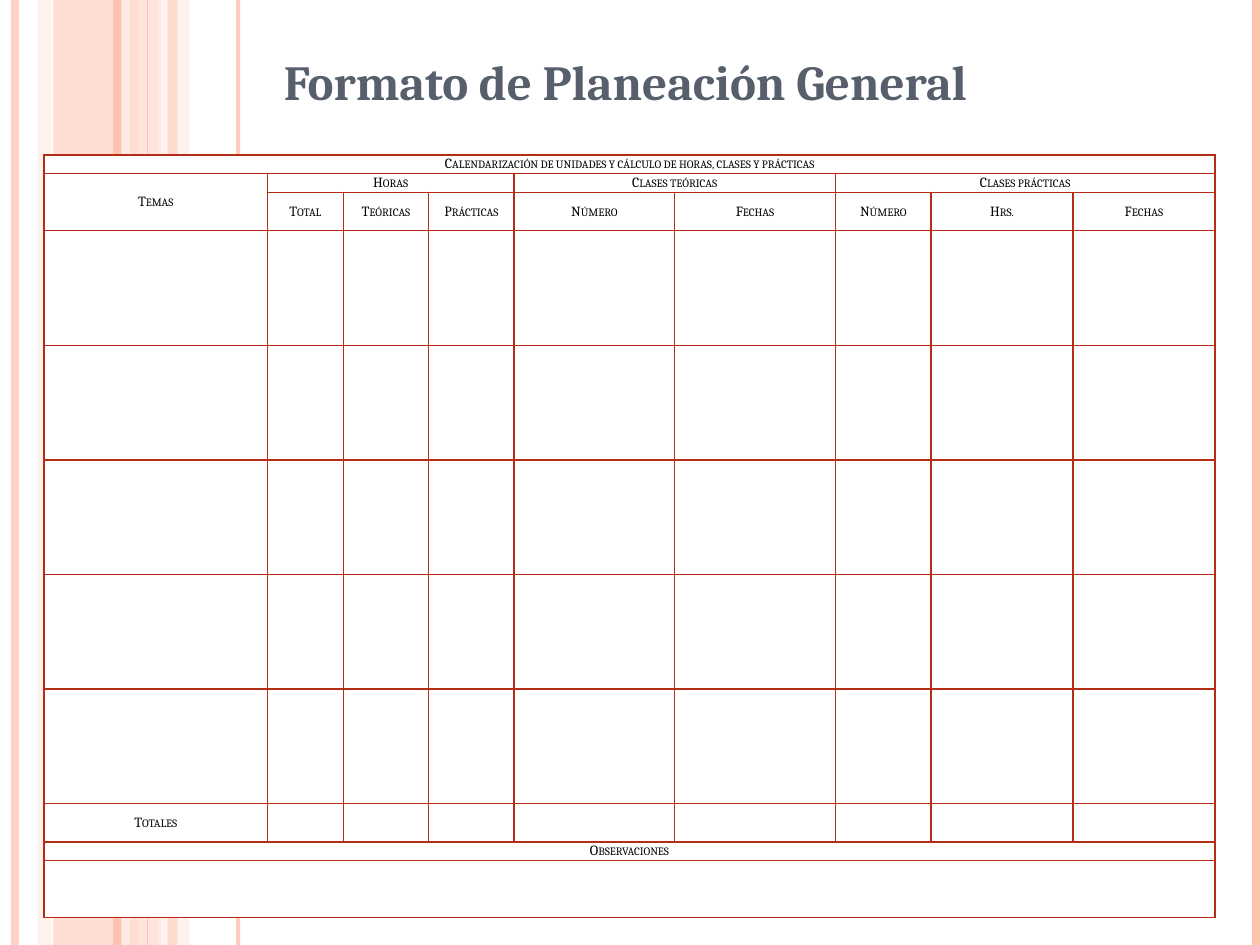
from lxml.etree import SubElement as Sub
from pptx import Presentation
from pptx.dml.color import RGBColor
from pptx.enum.shapes import MSO_CONNECTOR as Link, MSO_SHAPE as Kind
from pptx.enum.text import MSO_ANCHOR as Anchor, PP_ALIGN as Align
from pptx.oxml.ns import qn
from pptx.util import Cm, Pt

PEACH = RGBColor(0xFE, 0xC3, 0xAE)
PALE = RGBColor(0xFF, 0xD9, 0xCE)
MIST = RGBColor(0xFF, 0xED, 0xE8)
SLATE = RGBColor(0x57, 0x5F, 0x6D)
RUST = RGBColor(0xB3, 0x2C, 0x16)
BLACK = RGBColor(0, 0, 0)
WHITE = RGBColor(0xFF, 0xFF, 0xFF)
FONT = "Cambria"
WIDE, HIGH = 25.4, 19.05

BANDS = [
    (1.07, 1.7, PEACH, 54),
    (0.76, 0.28, PALE, 36),
    (2.74, 0.51, PALE, 70),
    (3.18, 0.64, MIST, 71),
    (3.38, 0.2, PEACH, 51),
]
STRIPES = [
    (0.3, 4.5, PEACH, 73),
    (2.54, 4.5, MIST, 83),
    (2.36, 4.5, PEACH, 100),
    (4.8, 2.25, PEACH, 82),
    (2.97, 0.75, PEACH, 100),
    (25.32, 4.5, PEACH, 100),
]
COLS = [4.5, 1.53, 1.72, 1.72, 3.24, 3.24, 1.93, 2.86, 2.86]
ROWS = [0.38, 0.38, 0.77] + [2.31] * 5 + [0.77, 0.38, 1.15]
SPANS = [
    (0, 0, 0, 8), (1, 0, 2, 0), (1, 1, 1, 3), (1, 4, 1, 5),
    (1, 6, 1, 8), (9, 0, 9, 8), (10, 0, 10, 8),
]
HEADS = ["Total", "Teóricas", "Prácticas", "Número", "Fechas",
         "Número", "Hrs.", "Fechas"]
LABELS = {
    (0, 0): "Calendarización de unidades y cálculo de horas, clases y prácticas",
    (1, 0): "Temas",
    (1, 1): "Horas",
    (1, 4): "Clases teóricas",
    (1, 6): "Clases prácticas",
    (8, 0): "Totales",
    (9, 0): "Observaciones",
    **{(2, col): head for col, head in enumerate(HEADS, 1)},
}


def fade(shape, pct):
    """Set the opacity of the shape's colour in percent."""
    if pct < 100:
        tint = next(shape.element.iter(qn("a:srgbClr")))
        Sub(tint, qn("a:alpha"), val=str(pct * 1000))


def band(slide, left, width, color, pct):
    """Draw a full-height translucent band."""
    box = slide.shapes.add_shape(Kind.RECTANGLE, Cm(left), 0, Cm(width), Cm(HIGH))
    box.shadow.inherit = False
    box.fill.solid()
    box.fill.fore_color.rgb = color
    box.line.fill.background()
    fade(box, pct)


def stripe(slide, left, weight, color, pct):
    """Draw a full-height vertical line."""
    line = slide.shapes.add_connector(Link.STRAIGHT, Cm(left), 0, Cm(left), Cm(HIGH))
    line.line.color.rgb = color
    line.line.width = Pt(weight)
    Sub(line.element.spPr, qn("a:effectLst"))
    fade(line, pct)


def write(frame, text, size=8, color=BLACK, bold=False, small=False):
    """Put one centred, formatted paragraph in a text frame."""
    para = frame.paragraphs[0]
    para.alignment = Align.CENTER
    if not text:
        Sub(para._p, qn("a:endParaRPr"), sz=str(size * 100))
        return
    run = para.add_run()
    run.text = text
    font = run.font
    font.name, font.size, font.bold = FONT, Pt(size), bold
    font.color.rgb = color
    if small:
        run._r.get_or_add_rPr().set("cap", "small")


def title(slide, text):
    """Add the slide heading."""
    box = slide.shapes.add_textbox(Cm(0.71), Cm(0.91), Cm(23.8), Cm(1.6))
    box.text_frame.word_wrap = True
    write(box.text_frame, text, size=28, color=SLATE, bold=True)


def dress(cell):
    """Give a cell its borders, fill and margins."""
    props = cell._tc.get_or_add_tcPr()
    for side in "LRTB":
        edge = Sub(props, qn(f"a:ln{side}"), w=str(Pt(1)))
        Sub(Sub(edge, qn("a:solidFill")), qn("a:srgbClr"), val=str(RUST))
    cell.fill.solid()
    cell.fill.fore_color.rgb = WHITE
    cell.margin_left = cell.margin_right = Cm(0.1)
    cell.margin_top = cell.margin_bottom = 0
    cell.vertical_anchor = Anchor.MIDDLE


def grid(slide):
    """Build the planning table."""
    frame = slide.shapes.add_table(len(ROWS), len(COLS), Cm(0.89), Cm(3.12),
                                   Cm(sum(COLS)), Cm(sum(ROWS)))
    table = frame.table
    table.first_row = table.horz_banding = False
    for col, width in zip(table.columns, COLS):
        col.width = Cm(width)
    for row, height in zip(table.rows, ROWS):
        row.height = Cm(height)
    for top, left, end, right in SPANS:
        table.cell(top, left).merge(table.cell(end, right))
    for row in range(len(ROWS)):
        for col in range(len(COLS)):
            cell = table.cell(row, col)
            dress(cell)
            write(cell.text_frame, LABELS.get((row, col), ""), small=True)


def main():
    """Build and save the slide."""
    deck = Presentation()
    deck.slide_width, deck.slide_height = Cm(WIDE), Cm(HIGH)
    slide = deck.slides.add_slide(deck.slide_layouts[6])
    for item in BANDS:
        band(slide, *item)
    for item in STRIPES:
        stripe(slide, *item)
    title(slide, "Formato de Planeación General")
    grid(slide)
    deck.save("out.pptx")


if __name__ == "__main__":
    main()
